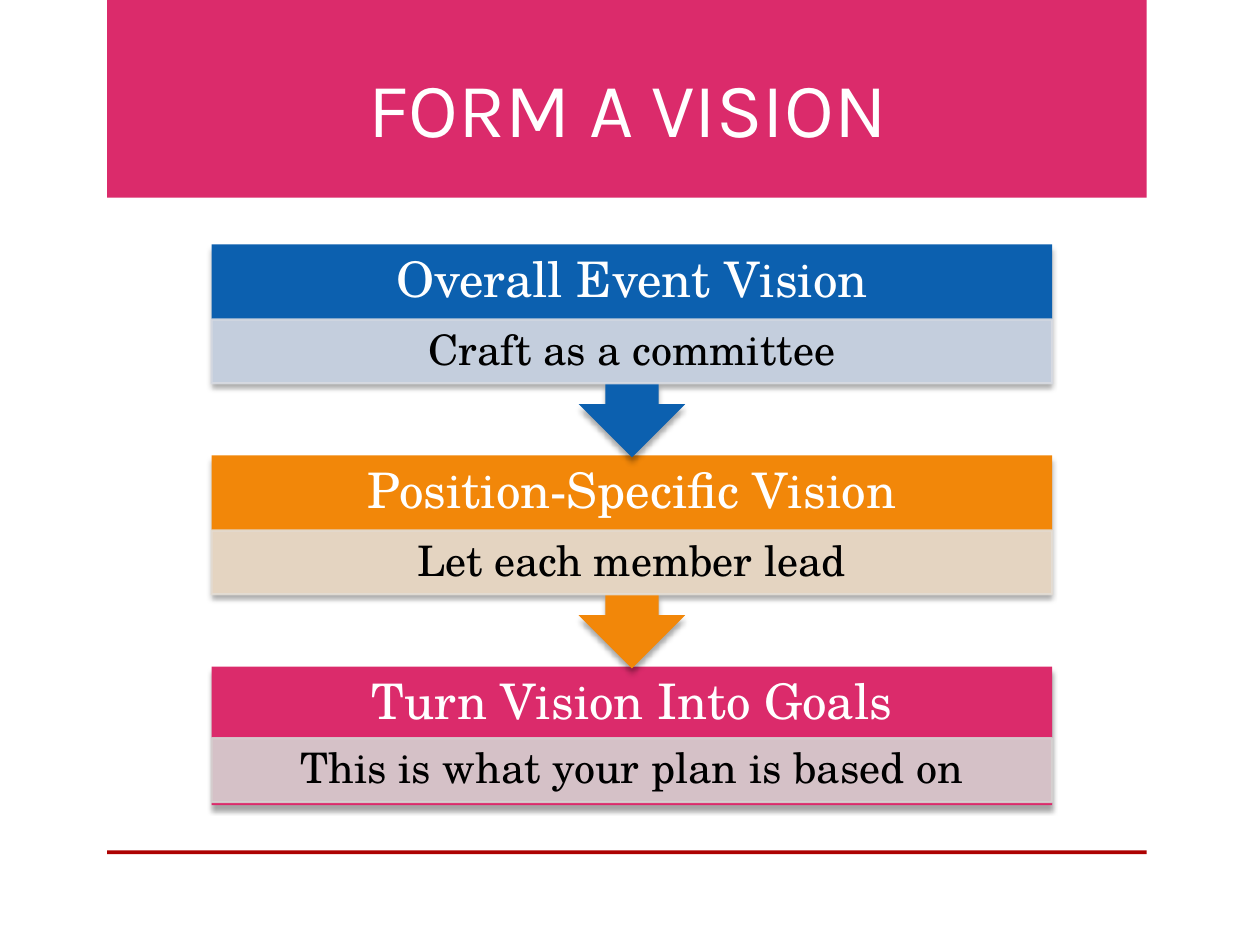
from lxml.etree import SubElement
from pptx import Presentation
from pptx.dml.color import RGBColor
from pptx.enum.shapes import MSO_SHAPE
from pptx.enum.text import MSO_ANCHOR, PP_ALIGN
from pptx.oxml.ns import qn
from pptx.util import Inches, Pt

COLORS = {
    "white": "FFFFFF", "black": "000000", "pink": "DB2B6B", "red": "AD0101",
    "orange": "F28709", "blue": "0C60AF",
    "pale pink": "D5D2D1", "pale orange": "E3DDD5", "pale blue": "D8DBE2",
}
HEADING_FONT, BODY_FONT = "Karla", "TeX Gyre Schola"


class SlideBuilder:
    """Places elements by (left, top, width, height) in percent of the slide."""

    def __init__(self, deck):
        self.deck = deck
        self.page = deck.slides.add_slide(deck.slide_layouts[6])

    def area(self, left, top, width, height):
        across, down = self.deck.slide_width, self.deck.slide_height
        return [round(share * size / 100) for share, size in
                zip((left, top, width, height), (across, down, across, down))]

    def shape(self, area, color, kind=MSO_SHAPE.RECTANGLE):
        shape = self.page.shapes.add_shape(kind, *self.area(*area))
        shape.shadow.inherit = False
        shape.fill.solid()
        shape.fill.fore_color.rgb = RGBColor.from_string(COLORS[color])
        shape.line.fill.background()
        return shape

    def shadowed(self, area, color, kind):
        shape = self.shape(area, color, kind)
        effects = shape._element.spPr.find(qn("a:effectLst"))
        shadow = SubElement(effects, qn("a:outerShdw"), blurRad=str(Pt(3)),
                            dist=str(Pt(3)), dir="5400000", rotWithShape="0")
        tint = SubElement(shadow, qn("a:srgbClr"), val=COLORS["black"])
        SubElement(tint, qn("a:alpha"), val="35000")
        return shape

    def translucent(self, area, color):
        shape = self.shape(area, color)
        shape.line.color.rgb = RGBColor.from_string(COLORS[color])
        shape.line.width = Pt(1.25)
        for tint in shape._element.spPr.iter(qn("a:srgbClr")):
            SubElement(tint, qn("a:alpha"), val="90000")

    def text(self, area, words, size, color, font=BODY_FONT, spacing=0.9,
             anchor=MSO_ANCHOR.MIDDLE, insets=(0.1, 0.05)):
        frame = self.page.shapes.add_textbox(*self.area(*area)).text_frame
        frame.word_wrap = True
        frame.vertical_anchor = anchor
        frame.margin_left = frame.margin_right = Inches(insets[0])
        frame.margin_top = frame.margin_bottom = Inches(insets[1])
        para = frame.paragraphs[0]
        para.text = words
        para.alignment = PP_ALIGN.CENTER
        para.line_spacing = spacing
        para.font.name, para.font.size = font, Pt(size)
        para.font.color.rgb = RGBColor.from_string(COLORS[color])

    def step(self, top, heading, detail, color, last=False):
        left, width = 16.8, 66.7
        if last:
            self.shadowed((left, top, width, 14.67), color, MSO_SHAPE.RECTANGLE)
        else:
            callout = self.shadowed((left, top, width, 22.53), color,
                                    MSO_SHAPE.UP_ARROW_CALLOUT)
            callout.rotation = 180
        self.text((left, top, width, 7.87), heading, 28, "white",
                  insets=(0.22, 0.22))
        band = (left, top + (7.6 if last else 7.95), width, 6.75)
        self.translucent(band, f"pale {color}")
        self.text(band, detail, 24, "black", insets=(0.19, 0.03))


def main():
    deck = Presentation()
    deck.slide_width, deck.slide_height = Inches(10), Inches(7.5)
    builder = SlideBuilder(deck)

    # Title banner and bottom rule
    builder.shape((8.5, 0, 82.5, 20.93), "pink")
    builder.shape((8.5, 90, 82.5, 0.4), "red")
    builder.text((8.7, 0.67, 82.3, 16.13), "FORM A VISION", 44, "white",
                 font=HEADING_FONT, spacing=1, anchor=MSO_ANCHOR.BOTTOM)

    # Steps, last one first so that each arrow overlaps the step below it
    steps = [
        ("Overall Event Vision", "Craft as a committee", "blue"),
        ("Position-Specific Vision", "Let each member lead", "orange"),
        ("Turn Vision Into Goals", "This is what your plan is based on", "pink"),
    ]
    first_top, pitch = 25.87, 22.33
    for index, step in reversed(list(enumerate(steps))):
        builder.step(first_top + index * pitch, *step,
                     last=index == len(steps) - 1)

    deck.save("out.pptx")


if __name__ == "__main__":
    main()
